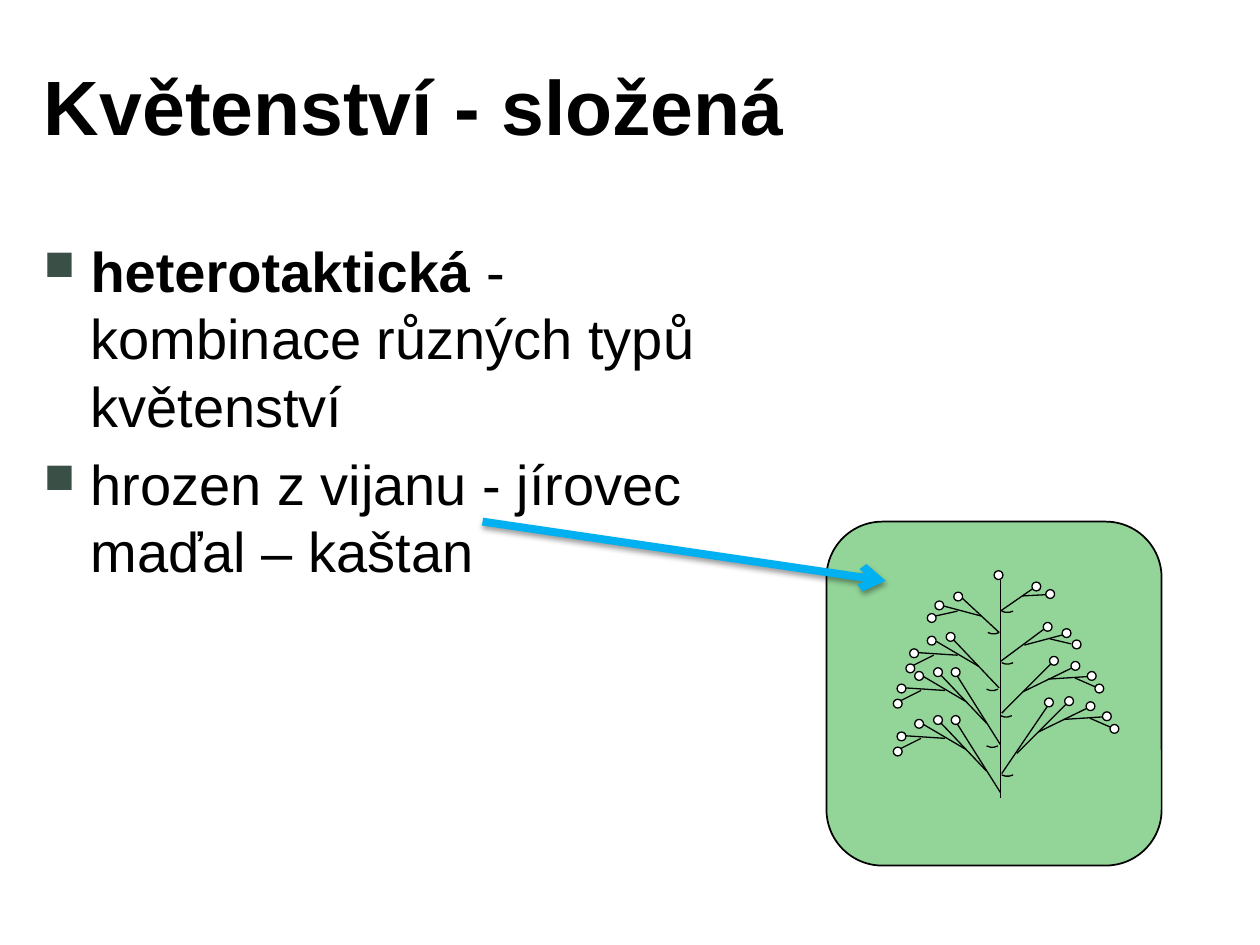
"""Build the slide on compound inflorescences with a diagram of a thyrse."""
from lxml import etree
from pptx import Presentation
from pptx.dml.color import RGBColor
from pptx.enum.shapes import MSO_CONNECTOR, MSO_SHAPE
from pptx.enum.text import MSO_ANCHOR
from pptx.oxml import parse_xml
from pptx.oxml.ns import nsdecls, qn
from pptx.util import Inches, Pt

COLORS = {"ink": "000000", "panel": "93D598", "flower": "FFFFFF",
          "bullet": "3A5047", "arrow": "00B0F0"}
COLS, ROWS = 1000, 750

prs = Presentation()
prs.slide_width, prs.slide_height = Inches(10), Inches(7.5)
CELL = prs.slide_width // COLS
slide = prs.slides.add_slide(prs.slide_layouts[6])
diagram = slide.shapes.add_group_shape().shapes


def add_line(shapes, ends, color="ink", width=0.75):
    line = shapes.add_connector(MSO_CONNECTOR.STRAIGHT, *(CELL * n for n in ends))
    line.line.color.rgb = RGBColor.from_string(COLORS[color])
    line.line.width = Pt(width)
    effects = etree.SubElement(line._element.spPr, qn("a:effectLst"))
    return line, effects


def add_outlined(kind, box, fill, width):
    shape = diagram.add_shape(kind, *(round(CELL * n) for n in box))
    shape.shadow.inherit = False
    shape.fill.solid()
    shape.fill.fore_color.rgb = RGBColor.from_string(COLORS[fill])
    shape.line.color.rgb = RGBColor.from_string(COLORS["ink"])
    shape.line.width = Pt(width)


add_outlined(MSO_SHAPE.ROUNDED_RECTANGLE, (656, 414, 266, 273), "panel", 1)
add_line(diagram, (794, 460, 794, 633))

for left, top in [(783, 592), (794, 568), (784, 502), (795, 485),
                  (795, 526), (783, 547), (795, 615)]:
    bract = diagram.build_freeform(left, top, scale=CELL)
    bract.add_line_segments([(left + 3, top + 1), (left + 6, top + 1), (left + 9, top)],
                            close=False)
    curve = bract.convert_to_shape()
    curve.shadow.inherit = False
    curve.fill.background()
    curve.line.color.rgb = RGBColor.from_string(COLORS["ink"])
    curve.line.width = Pt(0.75)

left_cyme = ([(767, 557, 733, 537), (715, 556, 731, 548), (783, 574, 746, 535),
              (719, 546, 750, 548)],
             [(712, 543), (741, 530), (709, 555), (726, 533)])
left_tip = ([(794, 591, 760, 537)], [(755, 530)])
right_cyme = ([(812, 549, 851, 530), (853, 538, 869, 545), (795, 566, 834, 527),
               (832, 539, 863, 537)],
              [(833, 521), (850, 525), (869, 543), (863, 533)])
right_tip = ([(795, 614, 831, 561)], [(829, 554)])
upper_left = ([(793, 502, 764, 475), (742, 489, 760, 485), (749, 481, 779, 489)],
              [(742, 477), (736, 487), (757, 470)])
upper_right = ([(794, 525, 829, 499), (833, 507, 850, 511), (813, 512, 843, 504)],
               [(828, 494), (851, 508), (843, 499)])
top_right = ([(811, 473, 830, 472), (794, 485, 820, 467)], [(830, 468), (819, 462)])
top_flower = ([], [(789, 453)])

branches = [(left_cyme, 0, 0), (left_tip, 0, 0), (left_cyme, 0, 38), (left_tip, 0, 38),
            (left_cyme, 10, -28), (right_cyme, 0, 0), (right_cyme, 12, 32),
            (right_tip, 0, 0), (upper_left, 0, 0), (upper_right, 0, 0),
            (top_right, 0, 0), (top_flower, 0, 0)]
for (stalks, flowers), dx, dy in branches:
    for x1, y1, x2, y2 in stalks:
        add_line(diagram, (x1 + dx, y1 + dy, x2 + dx, y2 + dy))
    for x, y in flowers:
        add_outlined(MSO_SHAPE.FLOWCHART_CONNECTOR, (x + dx, y + dy, 7, 7), "flower", 0.75)

heading = slide.shapes.add_textbox(*(CELL * n for n in (25, 17, 950, 133))).text_frame
heading.word_wrap = True
heading.vertical_anchor = MSO_ANCHOR.MIDDLE
title = heading.paragraphs[0]
title.text = "Květenství - složená"
title.font.name, title.font.size, title.font.bold = "Arial", Pt(44), True
title.font.color.rgb = RGBColor.from_string(COLORS["ink"])

body = slide.shapes.add_textbox(*(CELL * n for n in (25, 183, 608, 550))).text_frame
body.word_wrap = True
points = [[("heterotaktická", True), (" - kombinace různých typů květenství", False)],
          [("hrozen z vijanu - jírovec maďal – kaštan", False)]]
for index, runs in enumerate(points):
    point = body.add_paragraph() if index else body.paragraphs[0]
    props = point._p.get_or_add_pPr()
    props.set("marL", str(CELL * 37))
    props.set("indent", str(-CELL * 37))
    bullet_color = etree.SubElement(props, qn("a:buClr"))
    etree.SubElement(bullet_color, qn("a:srgbClr"), val=COLORS["bullet"])
    etree.SubElement(props, qn("a:buSzPct"), val="75000")
    etree.SubElement(props, qn("a:buChar"), char="■")
    point.space_before = Pt(6.4 * index)
    point.font.name, point.font.size = "Arial", Pt(32)
    point.font.color.rgb = RGBColor.from_string(COLORS["ink"])
    for words, bold in runs:
        run = point.add_run()
        run.text, run.font.bold = words, bold

pointer, effects = add_line(slide.shapes, (383, 414, 703, 461), "arrow", 4.5)
etree.SubElement(pointer.line._get_or_add_ln(), qn("a:tailEnd"), type="arrow")
effects.append(parse_xml(
    f'<a:outerShdw {nsdecls("a")} blurRad="{Pt(3.1)}" dist="{Pt(1.6)}" dir="5400000" '
    f'rotWithShape="0"><a:srgbClr val="{COLORS["ink"]}"><a:alpha val="38000"/>'
    '</a:srgbClr></a:outerShdw>'))

prs.save("out.pptx")
